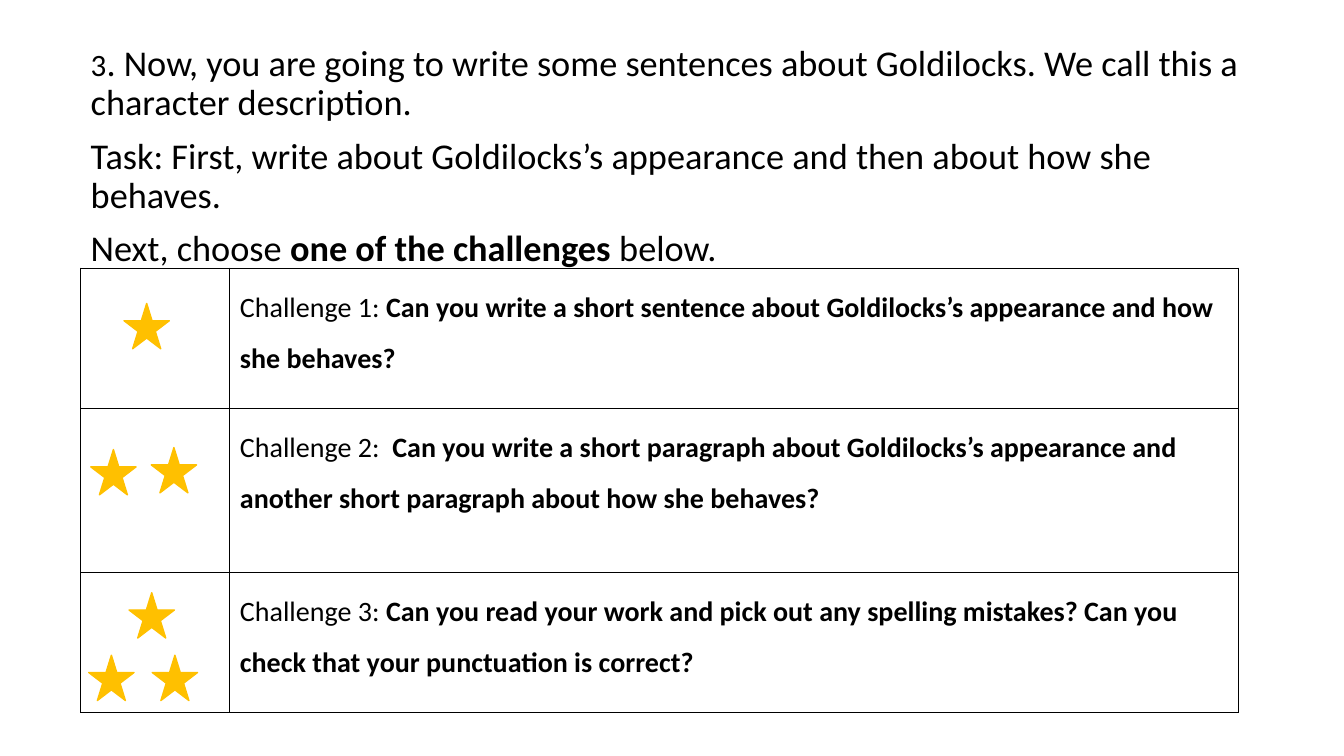
from lxml import etree
from pptx import Presentation
from pptx.dml.color import RGBColor
from pptx.enum.shapes import MSO_SHAPE
from pptx.enum.text import MSO_ANCHOR, MSO_AUTO_SIZE
from pptx.oxml.ns import qn
from pptx.util import Inches, Pt

STAR = MSO_SHAPE.STAR_5_POINT
TOP = MSO_ANCHOR.TOP
NO_FIT = MSO_AUTO_SIZE.NONE
COLORS = {"ink": "000000", "star": "FFC000"}
FONT = "Calibri"
LEFT, TABLE_TOP = 0.8, 2.66
COLS = [1.48, 10]
ROWS = [1.39, 1.63, 1.39]
SIDE = 0.45


def write(para, text, size=25.9, bold=False):
    run = para.add_run()
    run.text = text
    run.font.name = FONT
    run.font.size = Pt(size)
    run.font.bold = bold
    run.font.color.rgb = RGBColor.from_string(COLORS["ink"])


def border(cell):
    props = cell._tc.get_or_add_tcPr()
    for edge in ("lnL", "lnR", "lnT", "lnB"):
        line = etree.SubElement(props, qn(f"a:{edge}"), w=str(Pt(1)))
        fill = etree.SubElement(line, qn("a:solidFill"))
        etree.SubElement(fill, qn("a:srgbClr"), val=COLORS["ink"])


prs = Presentation()
prs.slide_width, prs.slide_height = Inches(13.33), Inches(7.5)
slide = prs.slides.add_slide(prs.slide_layouts[1])
title = slide.shapes.title._element
title.getparent().remove(title)

body = slide.placeholders[1]
body.left, body.top = Inches(LEFT), Inches(0.4)
body.width, body.height = Inches(11.78), Inches(2.44)
frame = body.text_frame
frame.word_wrap = True
frame.auto_size = NO_FIT
frame.vertical_anchor = TOP

intro = [
    [("3", 22.2, False),
     (". Now, you are going to write some sentences about Goldilocks. "
      "We call this a character description.", 25.9, False)],
    [("Task: First, write about Goldilocks’s appearance and then about how "
      "she behaves.", 25.9, False)],
    [("Next, choose ", 25.9, False), ("one of the challenges ", 25.9, True),
     ("below.", 25.9, False)],
]
for i, parts in enumerate(intro):
    para = frame.add_paragraph() if i else frame.paragraphs[0]
    props = para._p.get_or_add_pPr()
    props.set("marL", "0")
    props.set("indent", "0")
    etree.SubElement(props, qn("a:buNone"))
    para.line_spacing = 0.9
    para.space_before = Pt(10 if i else 0)
    for text, size, bold in parts:
        write(para, text, size=size, bold=bold)

tasks = [
    ("Challenge 1: ", "Can you write a short sentence about Goldilocks’s "
     "appearance and how she behaves?"),
    ("Challenge 2:  ", "Can you write a short paragraph about Goldilocks’s "
     "appearance and another short paragraph about how she behaves?"),
    ("Challenge 3: ", "Can you read your work and pick out any spelling "
     "mistakes? Can you check that your punctuation is correct?"),
]
table = slide.shapes.add_table(
    len(ROWS), len(COLS), Inches(LEFT), Inches(TABLE_TOP),
    Inches(sum(COLS)), Inches(sum(ROWS))).table
table.first_row = table.horz_banding = False
for col, width in zip(table.columns, COLS):
    col.width = Inches(width)
for row, height, (label, task) in zip(table.rows, ROWS, tasks):
    row.height = Inches(height)
    for cell in row.cells:
        border(cell)
        cell.fill.background()
    para = row.cells[1].text_frame.paragraphs[0]
    para.line_spacing = 1.5
    write(para, label, size=20)
    write(para, task, size=20, bold=True)

stars = [
    [(0.43, 0.35)],
    [(0.7, 0.39), (0.1, 0.41)],
    [(0.71, 0.82), (0.08, 0.82), (0.48, 0.2)],
]
for i, group in enumerate(stars):
    for x, y in group:
        star = slide.shapes.add_shape(
            STAR, Inches(LEFT + x), Inches(TABLE_TOP + sum(ROWS[:i]) + y),
            Inches(SIDE), Inches(SIDE))
        star.shadow.inherit = False
        star.fill.solid()
        star.fill.fore_color.rgb = RGBColor.from_string(COLORS["star"])
        star.line.color.rgb = RGBColor.from_string(COLORS["star"])
        star.line.width = Pt(1)

prs.save("out.pptx")
